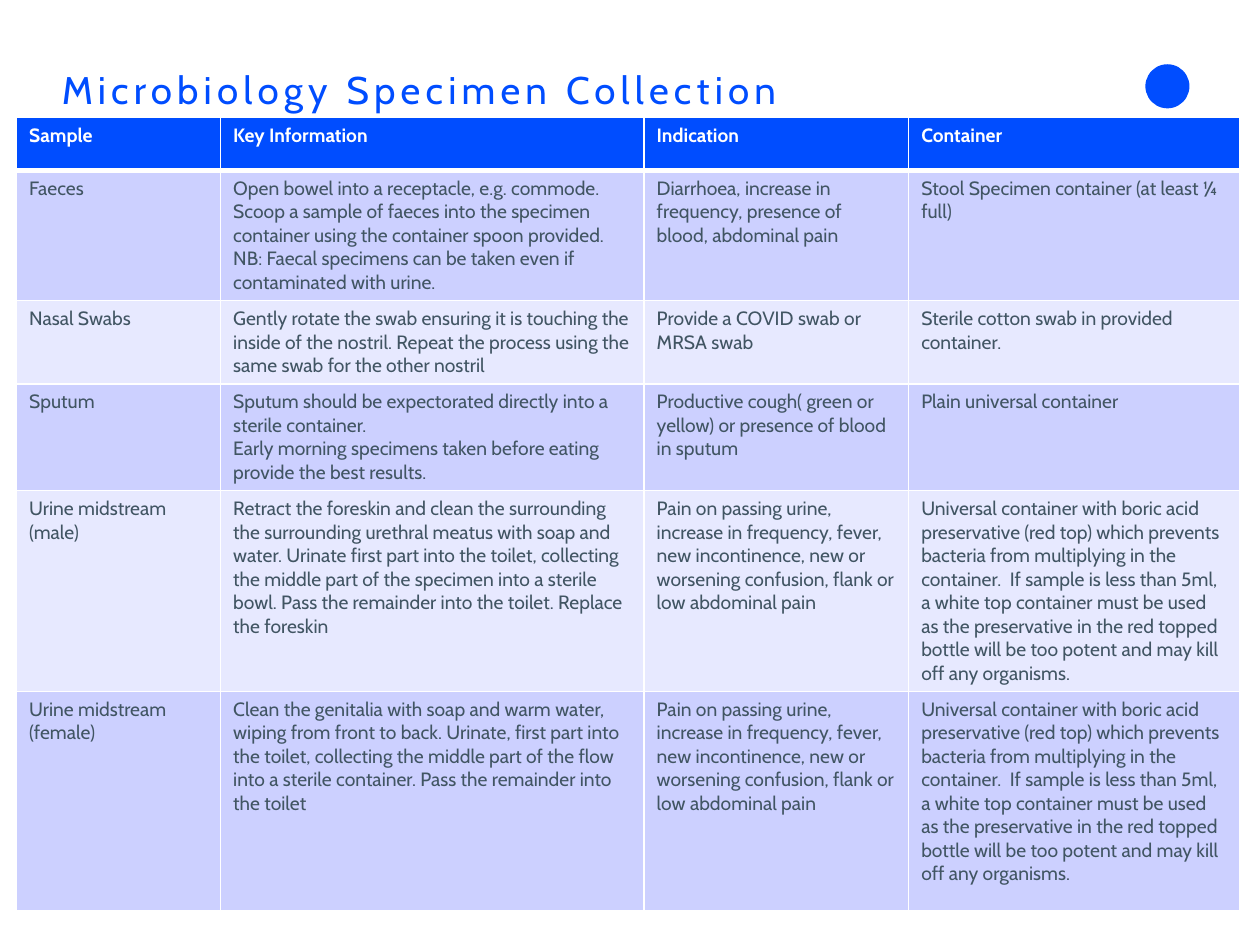
from lxml.etree import SubElement
from pptx import Presentation
from pptx.dml.color import RGBColor
from pptx.enum.shapes import MSO_SHAPE
from pptx.enum.text import MSO_ANCHOR, PP_ALIGN
from pptx.oxml.ns import qn
from pptx.util import Pt

FONT = "Cabin"
HUES = {"blue": "004DFF", "dark": "CCD0FF", "pale": "E7E9FF",
        "text": "415563", "white": "FFFFFF"}
TITLE = "Microbiology Specimen Collection"
HEAD = ("Sample", "Key Information", "Indication", "Container")
SIGNS = ("Pain on passing urine, increase in frequency, fever, new incontinence, "
         "new or worsening confusion, flank or low abdominal pain")
BORIC = ("Universal container with boric acid preservative (red top) which prevents "
         "bacteria from multiplying in the container.  If sample is less than 5ml, "
         "a white top container must be used as the preservative in the red topped "
         "bottle will be too potent and may kill off any organisms.")
ROWS = [
    ("Faeces",
     "Open bowel into a receptacle, e.g. commode. Scoop a sample of faeces into the "
     "specimen container using the container spoon provided. NB: Faecal specimens "
     "can be taken even if contaminated with urine.",
     "Diarrhoea, increase in frequency, presence of blood, abdominal pain",
     "Stool Specimen container (at least ¼ full)"),
    ("Nasal Swabs",
     "Gently rotate the swab ensuring it is touching the inside of the nostril. "
     "Repeat the process using the same swab for the other nostril",
     "Provide a COVID swab or MRSA swab",
     "Sterile cotton swab in provided container."),
    ("Sputum",
     "Sputum should be expectorated directly into a sterile container.\n"
     "Early morning specimens taken before eating provide the best results.",
     "Productive cough( green or yellow) or presence of blood in sputum",
     "Plain universal container"),
    ("Urine midstream (male)",
     "Retract the foreskin and clean the surrounding the surrounding urethral meatus "
     "with soap and water. Urinate first part into the toilet, collecting the middle "
     "part of the specimen into a sterile bowl. Pass the remainder into the toilet. "
     "Replace the foreskin",
     SIGNS, BORIC),
    ("Urine midstream\n(female)",
     "Clean the genitalia with soap and warm water, wiping from front to back. "
     "Urinate, first part into the toilet, collecting the middle part of the flow "
     "into a sterile container. Pass the remainder into the toilet",
     SIGNS, BORIC),
]
WIDTHS = (116.6, 242, 151.2, 189.4)
HEIGHTS = (30.2, 56.9, 30.2, 30.2, 52.6, 125.3)


def color(name):
    return RGBColor.from_string(HUES[name])


def style(font, size, hue, bold=False):
    font.name, font.size, font.bold = FONT, Pt(size), bold
    font.color.rgb = color(hue)


def border(cell, sides):
    props = cell._tc.get_or_add_tcPr()
    for spot, (side, width) in enumerate(sides.items()):
        line = SubElement(props, qn(f"a:{side}"), w=str(Pt(width)))
        fill = SubElement(line, qn("a:solidFill"))
        SubElement(fill, qn("a:srgbClr"), val=HUES["white"])
        props.insert(spot, line)


def add_title(slide):
    title = slide.shapes.title
    title.left, title.top, title.width, title.height = map(Pt, (35.3, 37.4, 598.3, 54))
    frame = title.text_frame
    frame.text = TITLE
    frame.word_wrap = True
    frame.vertical_anchor = MSO_ANCHOR.TOP
    frame.margin_left = 0
    para = frame.paragraphs[0]
    para.alignment = PP_ALIGN.LEFT
    para.line_spacing = 0.9
    run = para.runs[0]
    style(run.font, 22, "blue")
    run._r.get_or_add_rPr().set("spc", "300")


def add_dot(slide):
    dot = slide.shapes.add_shape(MSO_SHAPE.OVAL, Pt(654.5), Pt(36.7), Pt(25.2), Pt(25.2))
    dot.shadow.inherit = False
    dot.fill.solid()
    dot.fill.fore_color.rgb = color("blue")
    dot.line.fill.background()


def add_grid(slide):
    data = [HEAD] + ROWS
    table = slide.shapes.add_table(len(data), len(HEAD), Pt(9.5), Pt(67.2),
                                   Pt(sum(WIDTHS)), Pt(sum(HEIGHTS))).table
    for col, width in zip(table.columns, WIDTHS):
        col.width = Pt(width)
    for r, (row, height) in enumerate(zip(data, HEIGHTS)):
        table.rows[r].height = Pt(height)
        head = r == 0
        fill = "blue" if head else ("pale", "dark")[r % 2]
        sides = {"lnL": 1, "lnR": 1, "lnT": 3 if r == 1 else 1, "lnB": 3 if head else 1}
        for c, text in enumerate(row):
            cell = table.cell(r, c)
            cell.text_frame.text = text
            for para in cell.text_frame.paragraphs:
                for run in para.runs:
                    style(run.font, 11, "white" if head else "text", head)
            cell.fill.solid()
            cell.fill.fore_color.rgb = color(fill)
            border(cell, sides)


def main():
    deck = Presentation()
    deck.slide_width, deck.slide_height = Pt(720), Pt(540)
    slide = deck.slides.add_slide(deck.slide_layouts[5])
    add_dot(slide)
    add_title(slide)
    add_grid(slide)
    deck.save("out.pptx")


if __name__ == "__main__":
    main()
